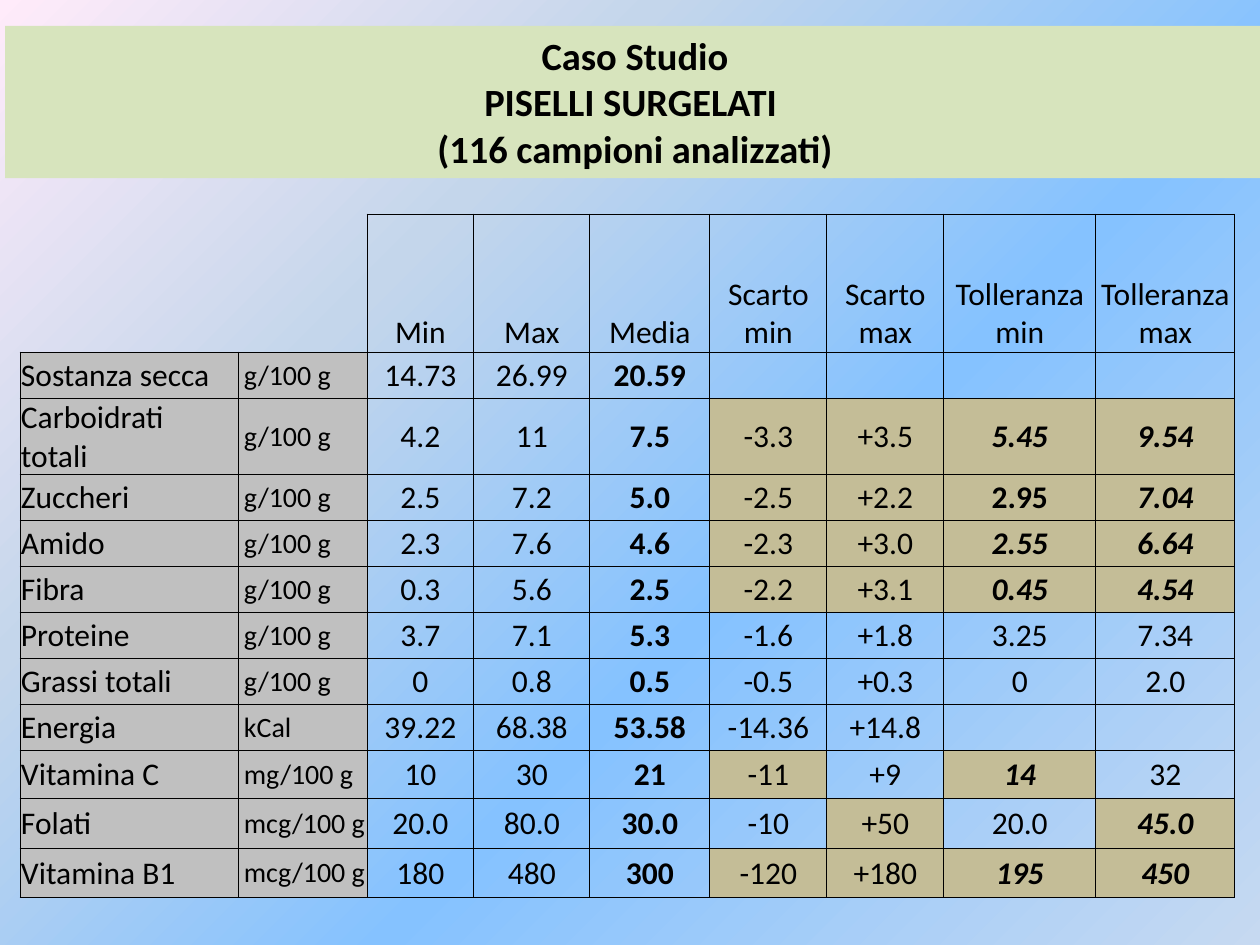
"""Build a slide with the nutrient table for frozen peas."""
from lxml.etree import SubElement
from pptx import Presentation
from pptx.dml.color import RGBColor
from pptx.enum.text import MSO_ANCHOR, MSO_AUTO_SIZE, PP_ALIGN
from pptx.oxml.ns import qn
from pptx.util import Emu, Pt

HUES = {"ink": "000000", "band": "D7E4BD", "head": "C0C0C0", "mark": "C4BD97",
        "mist": "C6D9F1", "sky": "85C2FF", "haze": "C4D6EB", "rose": "FFEBFA"}
STOPS = [(0, "mist", 36), (40, "sky", 100), (70, "haze", 100), (100, "rose", 100)]
TITLE = "Caso Studio\nPISELLI SURGELATI \n(116 campioni analizzati)"
COLS = [218, 129, 107, 116, 120, 117, 117, 152, 139]
ROWS = [138] + [46] * 8 + [48, 50, 49]
DATA = """||Min|Max|Media|Scarto min|Scarto max|Tolleranza min|Tolleranza max
Sostanza secca|g/100 g|14.73|26.99|20.59||||
Carboidrati totali|g/100 g|4.2|11|7.5|-3.3*|+3.5*|5.45*|9.54*
Zuccheri|g/100 g|2.5|7.2|5.0|-2.5*|+2.2*|2.95*|7.04*
Amido|g/100 g|2.3|7.6|4.6|-2.3*|+3.0*|2.55*|6.64*
Fibra|g/100 g|0.3|5.6|2.5|-2.2*|+3.1*|0.45*|4.54*
Proteine|g/100 g|3.7|7.1|5.3|-1.6|+1.8|3.25|7.34
Grassi totali|g/100 g|0|0.8|0.5|-0.5|+0.3|0|2.0
Energia|kCal|39.22|68.38|53.58|-14.36|+14.8||
Vitamina C|mg/100 g|10|30|21|-11*|+9|14*|32
Folati|mcg/100 g|20.0|80.0|30.0|-10|+50*|20.0|45.0*
Vitamina B1|mcg/100 g|180|480|300|-120*|+180*|195*|450*"""
UNIT, MEAN, LIMIT = 1, 4, 7
UPRIGHT = "2.95"


def px(count):
    return Emu(round(count * 914400 / 126))


class Deck:
    def __init__(self):
        self.font = "Calibri"
        self.show = Presentation()
        self.show.slide_width, self.show.slide_height = px(1260), px(945)
        self.slide = self.show.slides.add_slide(self.show.slide_layouts[5])

    def style(self, para, size, bold=False, slant=False):
        for run in para.runs:
            font = run.font
            font.name, font.size = self.font, Pt(size)
            font.bold, font.italic = bold, slant
            font.color.rgb = RGBColor.from_string(HUES["ink"])

    def paint(self, fill, hue):
        if hue:
            fill.solid()
            fill.fore_color.rgb = RGBColor.from_string(HUES[hue])
        else:
            fill.background()

    def backdrop(self, stops):
        self.slide.background.fill.gradient()
        grad = self.slide.element.find(".//" + qn("a:gradFill"))
        for child in list(grad):
            grad.remove(child)
        group = SubElement(grad, qn("a:gsLst"))
        for place, hue, alpha in stops:
            stop = SubElement(group, qn("a:gs"), pos=str(place * 1000))
            tint = SubElement(stop, qn("a:srgbClr"), val=HUES[hue])
            if alpha < 100:
                SubElement(tint, qn("a:alpha"), val=str(alpha * 1000))
        route = SubElement(grad, qn("a:path"), path="circle")
        SubElement(route, qn("a:fillToRect"), l="100000", t="100000")

    def title(self, text, left, top, width, height):
        shape = self.slide.shapes.title
        shape.left, shape.top = px(left), px(top)
        shape.width, shape.height = px(width), px(height)
        self.paint(shape.fill, "band")
        frame = shape.text_frame
        frame.text = text
        frame.word_wrap = True
        frame.auto_size = MSO_AUTO_SIZE.SHAPE_TO_FIT_TEXT
        frame.vertical_anchor = MSO_ANCHOR.TOP
        for para in frame.paragraphs:
            para.alignment = PP_ALIGN.CENTER
            self.style(para, 22, bold=True)

    def border(self, cell, sides):
        props = cell._tc.get_or_add_tcPr()
        for side in "LRTB":
            line = SubElement(props, qn("a:ln" + side), w=str(Pt(0.5)))
            if side in sides:
                fill = SubElement(line, qn("a:solidFill"))
                SubElement(fill, qn("a:srgbClr"), val=HUES["ink"])
            else:
                SubElement(line, qn("a:noFill"))

    def cell(self, cell, row, col, text):
        value = text.rstrip("*")
        marked = value != text
        corner = row == 0 and col <= UNIT
        label = col <= UNIT
        self.border(cell, ("B", "RB")[col] if corner else "LRTB")
        hue = "head" if label and not corner else "mark" if marked else None
        self.paint(cell.fill, hue)
        cell.margin_left = cell.margin_right = cell.margin_top = px(1)
        cell.margin_bottom = 0
        cell.vertical_anchor = MSO_ANCHOR.MIDDLE if row else MSO_ANCHOR.BOTTOM
        cell.text_frame.text = value
        para = cell.text_frame.paragraphs[0]
        para.alignment = PP_ALIGN.LEFT if label else PP_ALIGN.CENTER
        if col == UNIT:
            para._p.get_or_add_pPr().set("marL", str(px(5)))
        limit = marked and col >= LIMIT
        bold = limit or (row > 0 and col == MEAN)
        self.style(para, 16 if col == UNIT else 18, bold, limit and value != UPRIGHT)

    def table(self, data, left, top, height):
        shape = self.slide.shapes.add_table(len(ROWS), len(COLS), px(left), px(top),
                                            px(sum(COLS)), px(sum(ROWS)))
        grid = shape.table
        grid.first_row = grid.horz_banding = False
        for col, width in zip(grid.columns, COLS):
            col.width = px(width)
        for row, tall in zip(grid.rows, ROWS):
            row.height = px(tall)
        shape.height = px(height)
        for row, line in enumerate(data.split("\n")):
            for col, text in enumerate(line.split("|")):
                self.cell(grid.cell(row, col), row, col, text)


def main():
    deck = Deck()
    deck.backdrop(STOPS)
    deck.title(TITLE, 5, 26, 1260, 152)
    deck.table(DATA, 20, 214, 684)
    deck.show.save("out.pptx")


if __name__ == "__main__":
    main()
